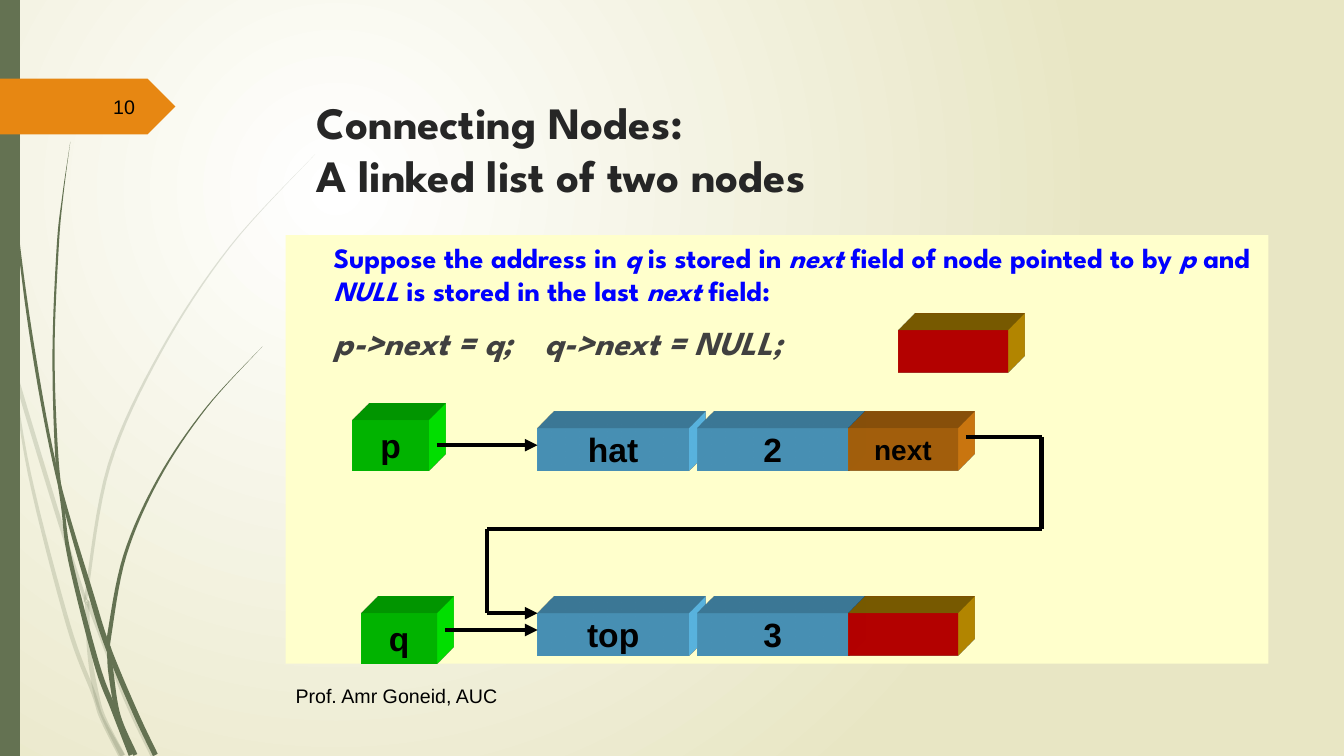
from dataclasses import dataclass
from math import hypot

from lxml import etree
from pptx import Presentation
from pptx.dml.color import RGBColor
from pptx.enum.shapes import MSO_CONNECTOR, MSO_SHAPE
from pptx.enum.text import MSO_ANCHOR, MSO_AUTO_SIZE, PP_ALIGN
from pptx.oxml import parse_xml
from pptx.oxml.ns import qn
from pptx.util import Pt

STRAIGHT = MSO_CONNECTOR.STRAIGHT
RECT, TAG = MSO_SHAPE.RECTANGLE, MSO_SHAPE.PENTAGON
TOP, MIDDLE = MSO_ANCHOR.TOP, MSO_ANCHOR.MIDDLE
LEFT, CENTER, RIGHT = PP_ALIGN.LEFT, PP_ALIGN.CENTER, PP_ALIGN.RIGHT
NO_FIT = MSO_AUTO_SIZE.NONE
PX = 9525  # EMU per px
NS = 'xmlns:a="http://schemas.openxmlformats.org/drawingml/2006/main"'
HEAD, PLAIN = "League Spartan", "Arial"
MOSS, ORANGE, SKY, RED, GREEN, GOLD = "647252", "E78712", "66CCFF", "FF0000", "00FF00", "CC9900"
BLACK, GREY, BLUE = "000000", "404040", "0000FF"


@dataclass
class Block:
    x: int
    y: int
    w: int
    h: int
    fill: str
    text: str = ""
    size: int = 24
    side: str = ""


@dataclass
class Blade:
    """A grass blade: (x, y, width) along its spine."""
    spine: list[tuple[int, int, int]]
    alpha: int = 100


BLADES = [
    Blade([(0, 278, 2), (10, 331, 3), (16, 361, 4), (58, 500, 4), (81, 570, 3),
           (86, 579, 4), (120, 665, 5), (146, 720, 5)], 20),
    Blade([(10, 336, 1), (28, 451, 3), (65, 595, 4), (89, 660, 4), (97, 684, 4), (116, 720, 6)], 20),
    Blade([(300, 147, 0), (219, 235, 1), (153, 335, 2), (104, 443, 3), (83, 561, 3),
           (83, 576, 4), (85, 620, 4), (91, 658, 5), (99, 684, 4), (117, 720, 5)], 20),
    Blade([(3, 0, 1), (7, 106, 1), (17, 224, 2), (33, 341, 3), (55, 455, 3), (87, 567, 5),
           (103, 617, 5), (129, 679, 5), (148, 719, 5)]),
    Blade([(67, 135, 0), (60, 185, 1), (55, 235, 2), (51, 335, 2), (54, 433, 3), (60, 485, 3),
           (67, 534, 4), (92, 632, 5), (108, 675, 5), (125, 719, 5)]),
    Blade([(250, 330, 0), (196, 389, 1), (151, 456, 2), (119, 529, 3), (104, 606, 4),
           (104, 619, 4), (106, 643, 5), (113, 682, 4), (129, 719, 4)]),
]


def node(y: int, word: str, number: str, last: Block) -> list[Block]:
    return [Block(512, y, 144, 40, SKY, word), Block(664, y, 144, 40, SKY, number), last]


BLOCKS = [
    *node(584, "top", "3", Block(808, 584, 104, 40, RED, side=GOLD)),
    *node(408, "hat", "2", Block(808, 408, 104, 40, ORANGE, "next", 20)),
    Block(344, 584, 72, 48, GREEN, "q"),
    Block(336, 400, 72, 48, GREEN, "p"),
    Block(856, 315, 104, 40, RED, side=GOLD),
]
LINKS = [  # each ends in an arrowhead
    [(416, 424), (512, 424)],
    [(424, 600), (512, 600)],
    [(920, 416), (992, 416), (992, 504), (464, 504), (464, 584), (512, 584)],
]
SUPPOSE = ["Suppose the address in ", "q", " is stored in ", "next", " field of node pointed to by",
           " p ", "and ", "NULL", " is stored in the last ", "next ", "field:"]


def rgb(value: str) -> RGBColor:
    return RGBColor.from_string(value)


def paint(sp, fill: str):
    sp.shadow.inherit = False
    sp.fill.solid()
    sp.fill.fore_color.rgb = rgb(fill)
    sp.line.fill.background()


def place(sp, x: int, y: int, w: int, h: int):
    for name, value in {"left": x, "top": y, "width": w, "height": h}.items():
        setattr(sp, name, value * PX)


def add_run(p, text: str, size: int, color: str, font: str = PLAIN, **style):
    r = p.add_run()
    r.text = text
    for name, value in {"size": Pt(size), "name": font, **style}.items():
        setattr(r.font, name, value)
    r.font.color.rgb = rgb(color)


def setup(tf, **layout):
    for name, value in {"word_wrap": True, "auto_size": NO_FIT, **layout}.items():
        setattr(tf, name, value)


def set_background(slide):
    slide.background.fill.solid()
    bg = slide.background.fill._xPr
    bg.replace(bg.find(qn("a:solidFill")), parse_xml(
        f'<a:gradFill {NS} rotWithShape="1"><a:gsLst>'
        '<a:gs pos="0"><a:srgbClr val="FFFFFF"/></a:gs>'
        '<a:gs pos="100000"><a:srgbClr val="E8E6C4"/></a:gs></a:gsLst>'
        '<a:path path="circle"><a:fillToRect l="50000" t="50000" r="100000" b="100000"/>'
        '</a:path></a:gradFill>'))


def smooth(points: list, steps: int = 8) -> list:
    """Points of a Catmull-Rom curve through the given ones."""
    ends = [points[0], *points, points[-1]]
    curve = []
    for a, b, c, d in zip(ends, ends[1:], ends[2:], ends[3:]):
        for t in (i / steps for i in range(steps)):
            curve.append([(2 * q + (r - p) * t + (2 * p - 5 * q + 4 * r - s) * t ** 2
                           + (3 * q - p - 3 * r + s) * t ** 3) / 2
                          for p, q, r, s in zip(a, b, c, d)])
    return curve + [points[-1]]


def add_blade(shapes, blade: Blade):
    curve = smooth(blade.spine)
    left, right = [], []
    for i, (x, y, w) in enumerate(curve):
        before, after = curve[max(i - 1, 0)], curve[min(i + 1, len(curve) - 1)]
        dx, dy = after[0] - before[0], after[1] - before[1]
        k = w / 2 / hypot(dx, dy)
        left.append(((x - dy * k) * PX, (y + dx * k) * PX))
        right.append(((x + dy * k) * PX, (y - dx * k) * PX))
    outline = left + right[::-1]
    builder = shapes.build_freeform(*outline[0])
    builder.add_line_segments(outline[1:])
    sp = builder.convert_to_shape()
    paint(sp, MOSS)
    color = sp.fill._xPr.find(qn("a:solidFill"))[0]
    etree.SubElement(color, qn("a:alpha"), val=str(blade.alpha * 1000))


def add_block(shapes, block: Block):
    """A rectangle extruded up and to the right."""
    sp = shapes.add_shape(RECT, *(v * PX for v in (block.x, block.y, block.w, block.h)))
    paint(sp, block.fill)
    for xml in (
        f'<a:scene3d {NS}><a:camera prst="legacyObliqueTopRight"/>'
        '<a:lightRig rig="legacyFlat3" dir="b"/></a:scene3d>',
        f'<a:sp3d {NS} extrusionH="430200" prstMaterial="legacyMatte"><a:extrusionClr>'
        f'<a:srgbClr val="{block.side or block.fill}"/></a:extrusionClr></a:sp3d>',
    ):
        sp._element.spPr.append(parse_xml(xml))
    if block.text:
        setup(sp.text_frame, word_wrap=False, vertical_anchor=MIDDLE)
        p = sp.text_frame.paragraphs[0]
        p.alignment = CENTER
        add_run(p, block.text, block.size, BLACK, bold=True)


def add_link(shapes, points: list[tuple[int, int]]):
    for start, end in zip(points, points[1:]):
        line = shapes.add_connector(STRAIGHT, *(v * PX for v in start + end))
        line.line.width = Pt(3)
        line.line.color.rgb = rgb(BLACK)
        if end == points[-1]:
            etree.SubElement(line.line._get_or_add_ln(), qn("a:tailEnd"), type="triangle")
        etree.SubElement(line._element.spPr, qn("a:effectLst"))


def add_label(shapes, x: int, y: int, w: int, h: int, text: str, align):
    tf = shapes.add_textbox(*(v * PX for v in (x, y, w, h))).text_frame
    setup(tf, vertical_anchor=MIDDLE)
    tf.paragraphs[0].alignment = align
    add_run(tf.paragraphs[0], text, 14, BLACK)


def fill_title(title):
    place(title, 292, 85, 816, 120)
    setup(title.text_frame, vertical_anchor=TOP)
    p = title.text_frame.paragraphs[0]
    p.alignment = LEFT
    add_run(p, "Connecting Nodes: ", 32, "262626", HEAD, bold=True)
    p.add_line_break()
    add_run(p, "A linked list of two nodes", 32, "262626", HEAD, bold=True)


def fill_body(body):
    place(body, 272, 224, 936, 408)
    paint(body, "FFFFCC")
    tf = body.text_frame
    setup(tf, vertical_anchor=TOP)
    suppose, code = tf.paragraphs[0], tf.add_paragraph()
    for p in (suppose, code):
        p.space_before = Pt(10)
        pPr = p._p.get_or_add_pPr()
        pPr.set("marL", str(36 * PX))
        pPr.set("indent", "0")
        etree.SubElement(pPr, qn("a:buNone"))
    for i, text in enumerate(SUPPOSE):
        add_run(suppose, text, 20, BLUE, HEAD, bold=True, italic=i % 2 == 1)
    add_run(code, "p->next = q;\t q->next = NULL;", 24, GREY, HEAD, bold=True, italic=True)


def main():
    prs = Presentation()
    prs.slide_width, prs.slide_height = 1280 * PX, 720 * PX
    slide = prs.slides.add_slide(prs.slide_layouts[1])
    shapes = slide.shapes
    set_background(slide)
    fill_title(shapes.title)
    fill_body(slide.placeholders[1])
    for blade in BLADES:
        add_blade(shapes, blade)
    for x, y, w, h, kind, fill in ((0, 0, 19, 720, RECT, MOSS), (0, 75, 167, 53, TAG, ORANGE)):
        paint(shapes.add_shape(kind, x * PX, y * PX, w * PX, h * PX), fill)
    add_label(shapes, 272, 644, 800, 38, "Prof. Amr Goneid, AUC", LEFT)
    add_label(shapes, 56, 83, 82, 38, "10", RIGHT)
    for block in BLOCKS:
        add_block(shapes, block)
    for points in LINKS:
        add_link(shapes, points)
    prs.save("out.pptx")


if __name__ == "__main__":
    main()
